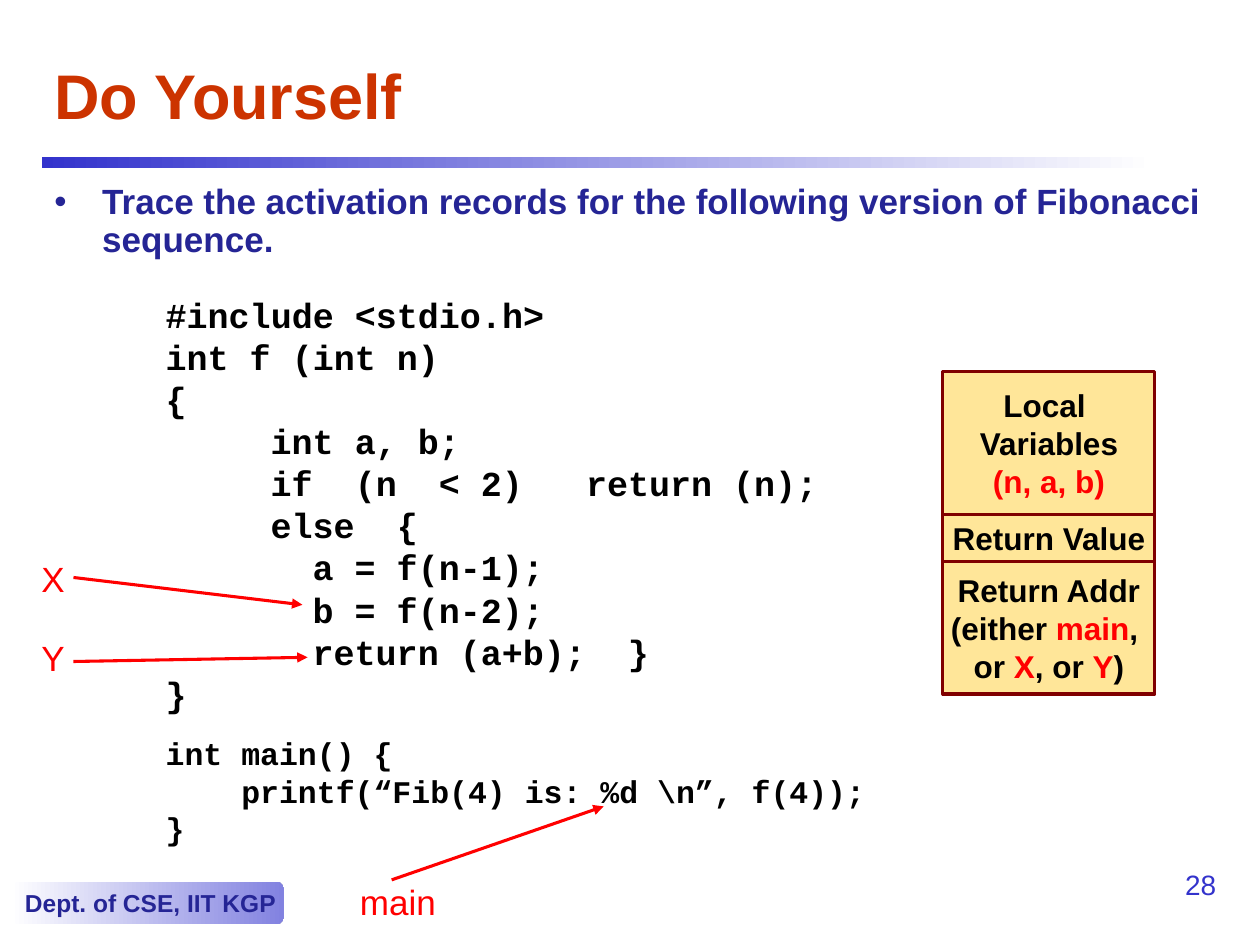
from pptx import Presentation
from pptx.dml.color import RGBColor
from pptx.enum.shapes import MSO_CONNECTOR, MSO_SHAPE
from pptx.enum.text import MSO_ANCHOR, PP_ALIGN
from pptx.oxml.ns import qn
from pptx.util import Inches, Pt
from lxml import etree

WHITE = RGBColor(0xFF, 0xFF, 0xFF)
BLACK = RGBColor(0x00, 0x00, 0x00)
RED = RGBColor(0xFF, 0x00, 0x00)
BLUE = RGBColor(0x33, 0x33, 0xCC)
PALE_BLUE = RGBColor(0x82, 0x82, 0xE0)
NAVY = RGBColor(0x25, 0x25, 0x95)
RUST = RGBColor(0xCC, 0x33, 0x00)
SAND = RGBColor(0xFF, 0xE6, 0x99)
MAROON = RGBColor(0x80, 0x00, 0x00)

LEFT, CENTER, RIGHT = PP_ALIGN.LEFT, PP_ALIGN.CENTER, PP_ALIGN.RIGHT
TOP, MIDDLE = MSO_ANCHOR.TOP, MSO_ANCHOR.MIDDLE
RECTANGLE, ROUNDED = MSO_SHAPE.RECTANGLE, MSO_SHAPE.ROUNDED_RECTANGLE
STRAIGHT = MSO_CONNECTOR.STRAIGHT

COLUMNS, ROWS = 120, 90
SANS, MONO = "Arial", "Courier New"
MONO_ADVANCE = 0.6


class SlideBuilder:
    def __init__(self, presentation):
        self.slide = presentation.slides.add_slide(presentation.slide_layouts[6])
        self.column = presentation.slide_width / COLUMNS
        self.row = presentation.slide_height / ROWS

    def place(self, left, top, width, height):
        return (round(left * self.column), round(top * self.row),
                round(width * self.column), round(height * self.row))

    def paragraph(self, frame, runs, size, font=SANS, bold=False, align=LEFT):
        first = frame.paragraphs[0]
        paragraph = frame.add_paragraph() if first.runs else first
        paragraph.alignment = align
        for text, color in runs:
            run = paragraph.add_run()
            run.text = text
            run.font.name = font
            run.font.size = Pt(size)
            run.font.bold = bold
            run.font.color.rgb = color
        return paragraph

    def indent(self, paragraph, margin, hanging=0, bullet=None):
        properties = paragraph._p.get_or_add_pPr()
        properties.set("marL", str(int(margin)))
        properties.set("indent", str(int(-hanging)))
        if bullet:
            etree.SubElement(properties, qn("a:buFont")).set("typeface", SANS)
            etree.SubElement(properties, qn("a:buChar")).set("char", bullet)

    def text_box(self, area, anchor=TOP):
        frame = self.slide.shapes.add_textbox(*self.place(*area)).text_frame
        frame.word_wrap = True
        frame.vertical_anchor = anchor
        return frame

    def shape(self, kind, area):
        shape = self.slide.shapes.add_shape(kind, *self.place(*area))
        shape.shadow.inherit = False
        shape.text_frame.word_wrap = False
        shape.text_frame.vertical_anchor = MIDDLE
        return shape

    def gradient(self, kind, area, start, end):
        shape = self.shape(kind, area)
        shape.line.fill.background()
        shape.fill.gradient()
        shape.fill.gradient_angle = 0
        for stop, color, position in zip(shape.fill.gradient_stops, (start, end), (0, 1)):
            stop.color.rgb = color
            stop.position = position
        return shape

    def record(self, area, lines):
        shape = self.shape(RECTANGLE, area)
        shape.fill.solid()
        shape.fill.fore_color.rgb = SAND
        shape.line.color.rgb = MAROON
        shape.line.width = Pt(1.75)
        for runs in lines:
            self.paragraph(shape.text_frame, runs, 18, bold=True, align=CENTER)

    def code(self, frame, lines, size, gap=0):
        for number, (depth, text) in enumerate(lines):
            paragraph = self.paragraph(frame, [(text, BLACK)], size, MONO, True)
            self.indent(paragraph, Pt(depth * size * MONO_ADVANCE))
            if number == 0 and gap:
                paragraph.space_before = Pt(gap)

    def label(self, area, text, margin=0):
        paragraph = self.paragraph(self.text_box(area), [(text, RED)], 20)
        self.indent(paragraph, margin)

    def arrow(self, start, end):
        points = self.place(*start, *end)
        connector = self.slide.shapes.add_connector(STRAIGHT, *points)
        connector.line.color.rgb = RED
        connector.line.width = Pt(1.75)
        line = connector.line._get_or_add_ln()
        etree.SubElement(line, qn("a:tailEnd")).set("type", "triangle")
        etree.SubElement(connector._element.spPr, qn("a:effectLst"))


def main():
    presentation = Presentation()
    presentation.slide_width = Inches(10)
    presentation.slide_height = Inches(7.5)
    builder = SlideBuilder(presentation)

    builder.gradient(RECTANGLE, (4, 15, 106, 1), BLUE, WHITE)
    badge = builder.gradient(ROUNDED, (1, 84, 26, 4), WHITE, PALE_BLUE)
    badge.adjustments[0] = 0.167
    builder.paragraph(badge.text_frame, [("Dept. of CSE, IIT KGP", NAVY)], 14, bold=True)
    builder.paragraph(builder.text_box((110, 82, 7, 6)), [("28", BLUE)], 16, align=RIGHT)

    title = builder.text_box((4, 4, 113, 10), MIDDLE)
    builder.paragraph(title, [("Do Yourself", RUST)], 36, bold=True)

    task = builder.paragraph(
        builder.text_box((4, 17, 113, 11)),
        [("Trace the activation records for the following version of Fibonacci sequence.", NAVY)],
        20, bold=True)
    task.line_spacing = 0.9
    builder.indent(task, Inches(0.38), Inches(0.38), "•")

    program = builder.text_box((14.6, 27.4, 70, 54))
    builder.code(program, [
        (0, "#include <stdio.h>"),
        (0, "int f (int n)"),
        (0, "{"),
        (5, "int a, b;"),
        (5, "if  (n  < 2)   return (n);"),
        (5, "else  {"),
        (7, "a = f(n-1);"),
        (7, "b = f(n-2);"),
        (7, "return (a+b);  }"),
        (0, "}"),
    ], 20)
    builder.code(program, [
        (0, "int main() {"),
        (4, "printf(“Fib(4) is: %d \\n”, f(4));"),
        (0, "}"),
    ], 18, gap=11.3)

    records = [
        (13.6, [[("Local ", BLACK)], [("Variables", BLACK)], [("(n, a, b)", RED)]]),
        (4.5, [[("Return Value", BLACK)]]),
        (12.6, [
            [("Return Addr", BLACK)],
            [("(either ", BLACK), ("main", RED), (", ", BLACK)],
            [("or ", BLACK), ("X", RED), (", or ", BLACK), ("Y", RED), (")", BLACK)],
        ]),
    ]
    top = 35.4
    for height, lines in records:
        builder.record((89.8, top, 20.2, height), lines)
        top += height

    builder.label((0, 52.5, 8, 5.2), "X", Inches(0.23))
    builder.label((0, 60, 8, 5.2), "Y", Inches(0.23))
    builder.label((33.1, 83.3, 10.1, 5.2), "main")
    builder.arrow((7, 55), (28.8, 57.6))
    builder.arrow((7, 63), (29.3, 62.6))
    builder.arrow((37.3, 83.8), (57.5, 76.8))

    presentation.save("out.pptx")


if __name__ == "__main__":
    main()
